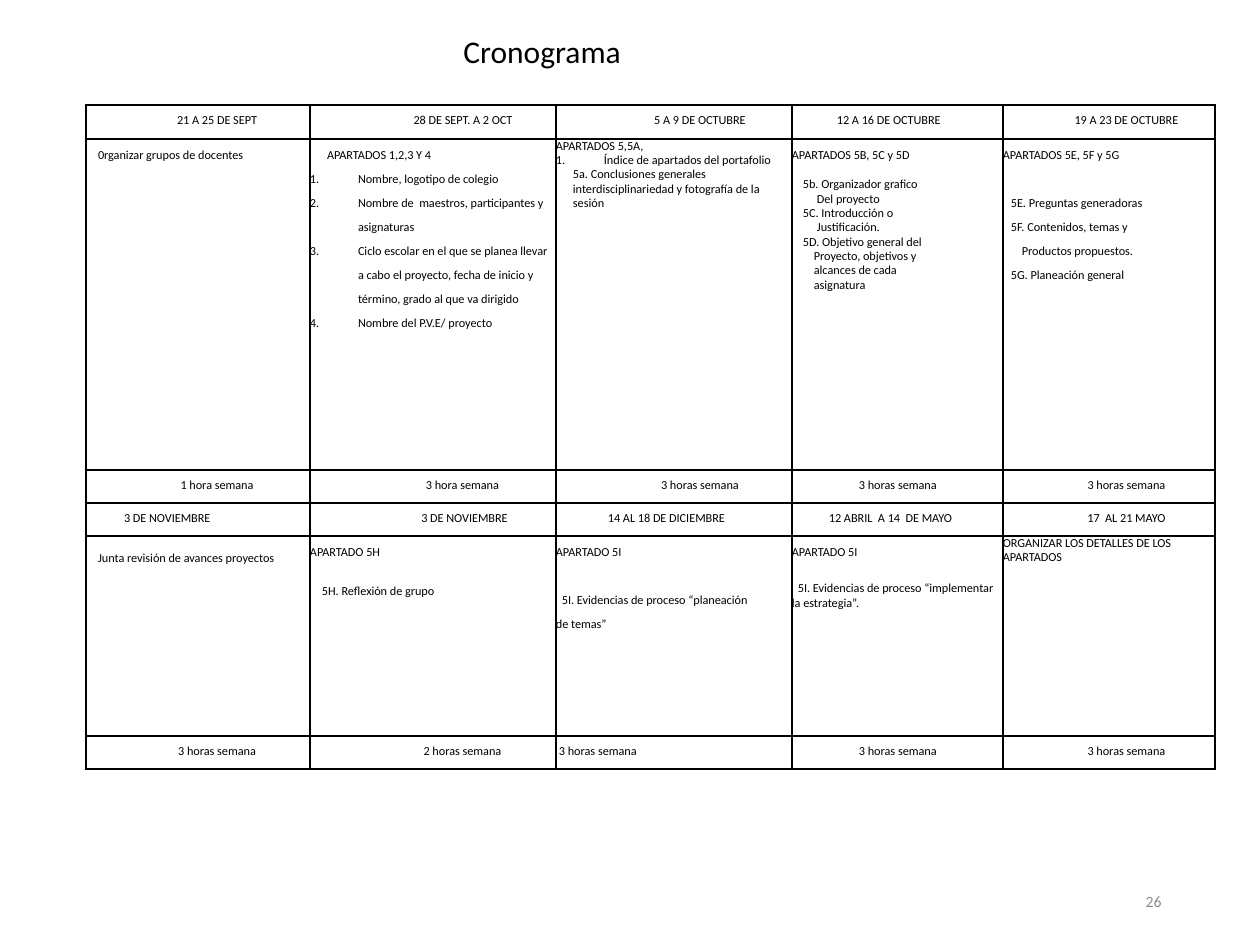
from lxml.etree import SubElement
from pptx import Presentation
from pptx.dml.color import RGBColor
from pptx.enum.text import MSO_ANCHOR, PP_ALIGN
from pptx.oxml import parse_xml
from pptx.oxml.ns import nsdecls, qn
from pptx.util import Pt

PX = 914400 // 126
FONT = "Calibri"
BLACK, GREY, WHITE = "000000", "8C8C8C", "FFFFFF"
LABEL_LINE, BODY_LINE, TIGHT = 12.9, 13.7, 0.95

COLUMNS = [224, 246, 236, 211, 212]
ROWS = [34, 331, 33, 33, 200, 33]
TABLE_LEFT, TABLE_TOP = 86, 105


def para(text, indent=0, first=0, line=BODY_LINE, before=0, center=False, numbered=False):
    """Describe a paragraph: indents in px; line in points, or a factor if a small number."""
    return dict(text=text, indent=indent, first=first, line=line,
                before=before, center=center, numbered=numbered)


def label(text, indent, center=True):
    return [para(text, indent, line=LABEL_LINE, center=center)]


def item(text, line=BODY_LINE):
    return para(text, 48, -48, line, numbered=True)


def tight(text, indent=0, before=0.1):
    return para(text, indent, line=TIGHT, before=before)


SCHEDULE = [
    [label("21 A 25 DE SEPT", 38), label("28 DE SEPT. A 2 OCT", 60),
     label("5 A 9 DE OCTUBRE", 52), label("12 A 16 DE OCTUBRE", 45, False),
     label("19 A 23 DE OCTUBRE", 35)],
    [[para("0rganizar grupos de docentes", 12)],
     [para("APARTADOS 1,2,3 Y 4", 17),
      item("Nombre, logotipo de colegio"),
      item("Nombre de  maestros, participantes y asignaturas"),
      item("Ciclo escolar en el que se planea llevar a cabo el proyecto, "
           "fecha de inicio y término, grado al que va dirigido"),
      item("Nombre del P.V.E/ proyecto")],
     [tight("APARTADOS 5,5A,"),
      item("Índice de apartados del portafolio", TIGHT),
      tight("5a. Conclusiones generales interdisciplinariedad y fotografía de la sesión", 17)],
     [para("APARTADOS 5B, 5C y 5D"),
      tight("5b. Organizador grafico", 11, 8.2),
      tight("Del proyecto", 25),
      tight("5C. Introducción o", 11),
      tight("Justificación.", 25),
      tight("5D. Objetivo general del", 11),
      tight("Proyecto, objetivos y", 22),
      tight("alcances de cada", 22),
      tight("asignatura", 22)],
     [para("APARTADOS 5E, 5F y 5G"),
      para("5E. Preguntas generadoras", 8, before=BODY_LINE),
      para("5F. Contenidos, temas y", 8),
      para("Productos propuestos.", 19),
      para("5G. Planeación general", 8)]],
    [label("1 hora semana", 38), label("3 hora semana", 59), label("3 horas semana", 52),
     label("3 horas semana", 67, False), label("3 horas semana", 35)],
    [label("3 DE NOVIEMBRE", 38, False), label("3 DE NOVIEMBRE", 63),
     label("14 AL 18 DE DICIEMBRE", 52, False), label("12 ABRIL  A 14  DE MAYO", 37, False),
     label("17  AL 21 MAYO", 35)],
    [[para("Junta revisión de avances proyectos", 12, line=17)],
     [para("APARTADO 5H"), tight("5H. Reflexión de grupo", 12, 14)],
     [para("APARTADO 5I"),
      para("5I. Evidencias de proceso “planeación", 6, before=BODY_LINE),
      para("de temas”")],
     [para("APARTADO 5I"),
      para("5I. Evidencias de proceso “implementar la estrategia”.", 0, 6, 1.0, 12.2)],
     [tight("ORGANIZAR LOS DETALLES DE LOS APARTADOS")]],
    [label("3 horas semana", 38), label("2 horas semana", 59),
     label("3 horas semana", 3, False), label("3 horas semana", 67, False),
     label("3 horas semana", 35)],
]


def color(hex_value):
    return RGBColor.from_string(hex_value)


def add_run(paragraph, text, size, hex_value):
    run = paragraph.add_run()
    run.text = text
    run.font.size = Pt(size)
    run.font.name = FONT
    run.font.color.rgb = color(hex_value)


def write_paragraph(paragraph, content):
    paragraph.alignment = PP_ALIGN.CENTER if content["center"] else PP_ALIGN.LEFT
    line = content["line"]
    paragraph.line_spacing = Pt(line) if line > 2 else line
    paragraph.space_before = Pt(content["before"])
    properties = paragraph._p.get_or_add_pPr()
    properties.set("marL", str(content["indent"] * PX))
    properties.set("indent", str(content["first"] * PX))
    if content["numbered"]:
        SubElement(properties, qn("a:buAutoNum"), type="arabicPeriod")
    add_run(paragraph, content["text"], 7, BLACK)


def add_borders(cell):
    properties = cell._tc.get_or_add_tcPr()
    for position, side in enumerate("LRTB"):
        properties.insert(position, parse_xml(
            f'<a:ln{side} {nsdecls("a")} w="{Pt(1)}"><a:solidFill>'
            f'<a:srgbClr val="{BLACK}"/></a:solidFill></a:ln{side}>'))


def write_cell(cell, contents):
    cell.margin_left = cell.margin_right = cell.margin_top = cell.margin_bottom = 0
    cell.fill.solid()
    cell.fill.fore_color.rgb = color(WHITE)
    add_borders(cell)
    frame = cell.text_frame
    for index, content in enumerate(contents):
        write_paragraph(frame.add_paragraph() if index else frame.paragraphs[0], content)


def add_schedule(slide):
    table = slide.shapes.add_table(
        len(ROWS), len(COLUMNS), TABLE_LEFT * PX, TABLE_TOP * PX,
        sum(COLUMNS) * PX, sum(ROWS) * PX).table
    table.first_row = table.horz_banding = False
    for column, width in zip(table.columns, COLUMNS):
        column.width = width * PX
    for row, height, row_contents in zip(table.rows, ROWS, SCHEDULE):
        row.height = height * PX
        for cell, contents in zip(row.cells, row_contents):
            write_cell(cell, contents)


def add_text(slide, box, text, size, hex_value, align, anchor):
    frame = slide.shapes.add_textbox(*(n * PX for n in box)).text_frame
    frame.word_wrap = True
    frame.vertical_anchor = anchor
    frame.paragraphs[0].alignment = align
    add_run(frame.paragraphs[0], text, size, hex_value)


def main():
    deck = Presentation()
    deck.slide_width, deck.slide_height = 1260 * PX, 945 * PX
    slide = deck.slides.add_slide(deck.slide_layouts[6])
    add_schedule(slide)
    add_text(slide, (890, 876, 284, 50), "26", 9, GREY, PP_ALIGN.RIGHT, MSO_ANCHOR.MIDDLE)
    add_text(slide, (451, 26, 496, 50), "Cronograma", 18, BLACK, PP_ALIGN.LEFT, MSO_ANCHOR.TOP)
    deck.save("out.pptx")


if __name__ == "__main__":
    main()
